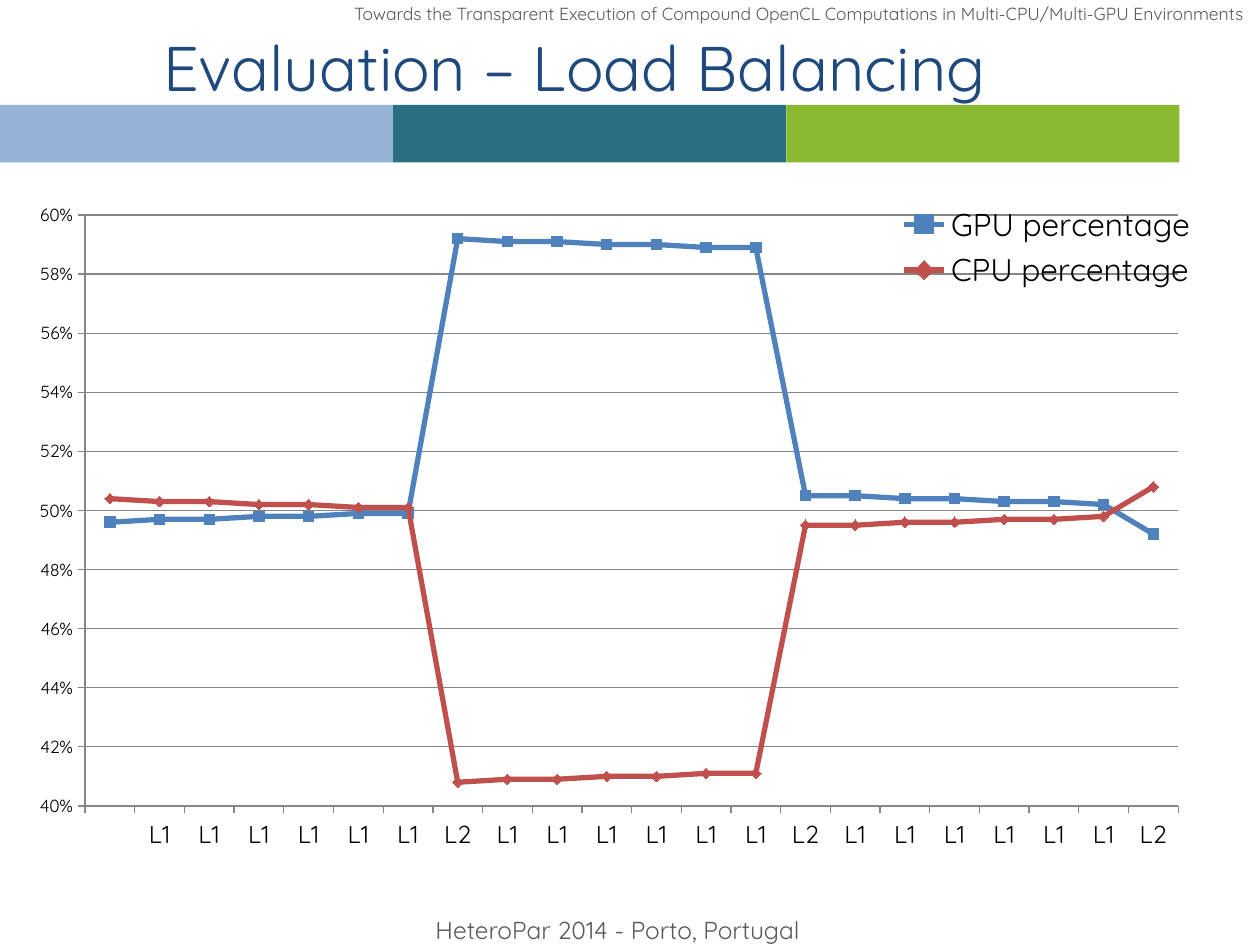
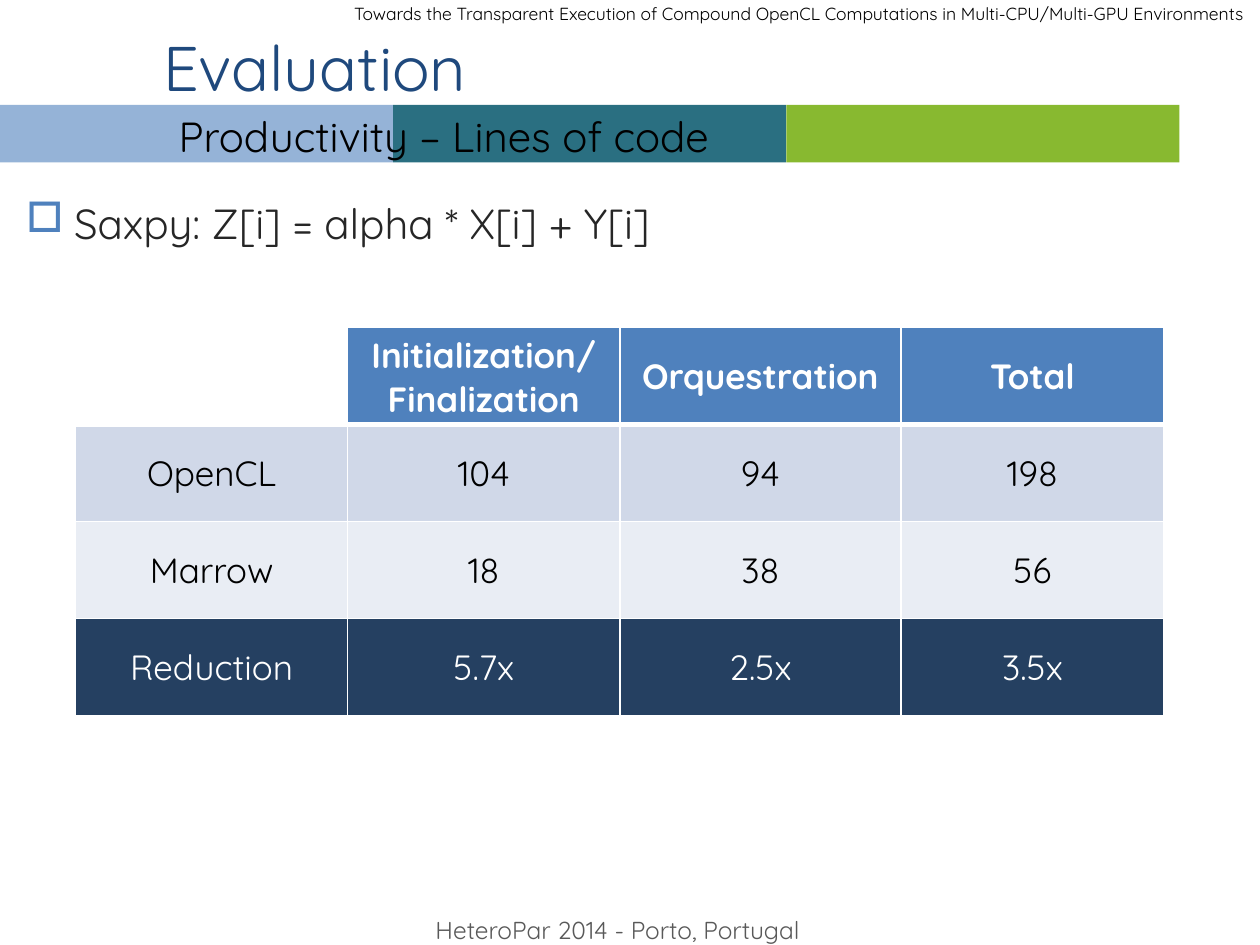
from dataclasses import dataclass

from lxml.etree import SubElement
from pptx import Presentation
from pptx.chart.data import CategoryChartData
from pptx.dml.color import RGBColor
from pptx.enum.chart import XL_CHART_TYPE, XL_LEGEND_POSITION, XL_MARKER_STYLE, XL_TICK_MARK
from pptx.enum.shapes import MSO_SHAPE
from pptx.enum.text import MSO_ANCHOR, PP_ALIGN
from pptx.oxml.ns import qn
from pptx.util import Inches, Pt


@dataclass(frozen=True)
class Theme:
    font: str = "Quicksand"
    # Colours
    title: str = "1F497D"
    white: str = "FFFFFF"
    black: str = "000000"
    muted: str = "595959"
    body: str = "262626"
    accent: str = "4F81BD"
    contrast: str = "C0504D"
    grid: str = "868686"
    bands: tuple = ("95B3D7", "2A6F81", "88B930")
    row_fills: tuple = ("4F81BD", "D0D8E8", "E9EDF4", "254061")
    # Type sizes
    title_size: int = 36
    body_size: int = 24
    table_size: int = 20
    legend_size: int = 18
    label_size: int = 14
    small_size: int = 10


THEME = Theme()
HEADER = ("Towards the Transparent Execution of Compound OpenCL Computations "
          "in Multi-CPU/Multi-GPU Environments ")
FOOTER = "HeteroPar 2014 - Porto, Portugal "
CONTENT_AREA = (0.11, 1.52, 9.43, 5.33)


def rgb(color):
    return RGBColor.from_string(color)


def write_text(frame, text, size=THEME.body_size, color=THEME.black, bold=False,
               align=PP_ALIGN.LEFT, anchor=MSO_ANCHOR.TOP, wrap=True):
    """Put one formatted paragraph in a text frame and return it."""
    frame.word_wrap = wrap
    frame.vertical_anchor = anchor
    paragraph = frame.paragraphs[0]
    paragraph.alignment = align
    run = paragraph.add_run()
    run.text = text
    set_font(run.font, size, color, bold)
    return paragraph


def set_font(font, size, color=THEME.black, bold=False):
    font.name = THEME.font
    font.size = Pt(size)
    font.bold = bold
    font.color.rgb = rgb(color)


def set_layout(parent, index, **fractions):
    """Place a chart part by fractions of the chart area."""
    for previous in parent.findall(qn("c:layout")):
        parent.remove(previous)
    layout = SubElement(parent, qn("c:layout"))
    parent.insert(index, layout)
    manual = SubElement(layout, qn("c:manualLayout"))
    if "w" in fractions:
        SubElement(manual, qn("c:layoutTarget"), val="inner")
    for axis in "xy":
        SubElement(manual, qn(f"c:{axis}Mode"), val="edge")
    for name, value in fractions.items():
        SubElement(manual, qn(f"c:{name}"), val=str(value))


def set_borders(cell, color, bottom):
    properties = cell._tc.get_or_add_tcPr()
    for index, (side, width) in enumerate(zip("LRTB", (1, 1, 1, bottom))):
        border = SubElement(properties, qn(f"a:ln{side}"), w=str(Pt(width)))
        fill = SubElement(border, qn("a:solidFill"))
        SubElement(fill, qn("a:srgbClr"), val=color)
        properties.insert(index, border)


class Deck:
    def __init__(self, theme):
        self.theme = theme
        self.presentation = Presentation()
        self.presentation.slide_width = Inches(10)
        self.presentation.slide_height = Inches(7.5)
        self.slide = None

    def new_slide(self, title, header_color):
        """Start a slide with its bands, title, header and footer."""
        theme = self.theme
        self.slide = self.presentation.slides.add_slide(self.presentation.slide_layouts[6])
        band_width = 3.12
        for position, color in enumerate(theme.bands):
            self.rectangle(position * band_width, 0.83, band_width, 0.46, color)
        heading = self.rectangle(0, 0.22, 9.75, 0.61, theme.white).text_frame
        heading.margin_left, heading.margin_right = Inches(1.3), Inches(0.3)
        write_text(heading, title, size=theme.title_size, color=theme.title,
                   anchor=MSO_ANCHOR.MIDDLE)
        edge = dict(align=PP_ALIGN.RIGHT, anchor=MSO_ANCHOR.MIDDLE)
        self.text(0, 0, 10, 0.22, HEADER, size=theme.small_size, color=header_color, **edge)
        self.text(3.12, 7.24, 3.38, 0.28, FOOTER, size=theme.label_size,
                  color=theme.muted, **edge)

    def rectangle(self, left, top, width, height, color):
        shape = self.slide.shapes.add_shape(
            MSO_SHAPE.RECTANGLE, *map(Inches, (left, top, width, height)))
        shape.shadow.inherit = False
        shape.fill.solid()
        shape.fill.fore_color.rgb = rgb(color)
        shape.line.fill.background()
        return shape

    def text(self, left, top, width, height, text, **style):
        box = self.slide.shapes.add_textbox(*map(Inches, (left, top, width, height)))
        return write_text(box.text_frame, text, **style)

    def bullet(self, text):
        paragraph = self.text(*CONTENT_AREA, text, color=self.theme.body)
        properties = paragraph._p.get_or_add_pPr()
        indent = Inches(0.38)
        properties.set("marL", str(indent))
        properties.set("indent", str(-indent))
        bullet_color = SubElement(properties, qn("a:buClr"))
        SubElement(bullet_color, qn("a:srgbClr"), val=self.theme.accent)
        SubElement(properties, qn("a:buChar"), char="□")

    def table(self, left, top, column_widths, row_height, rows):
        theme = self.theme
        table = self.slide.shapes.add_table(
            len(rows), len(column_widths), Inches(left), Inches(top),
            Inches(sum(column_widths)), Inches(row_height * len(rows))).table
        for column, width in zip(table.columns, column_widths):
            column.width = Inches(width)
        for r, row in enumerate(rows):
            is_header = r == 0
            color = theme.white if r in (0, len(rows) - 1) else theme.black
            for c, value in enumerate(row):
                cell = table.cell(r, c)
                cell.fill.solid()
                cell.fill.fore_color.rgb = rgb(theme.row_fills[r] if value else theme.white)
                set_borders(cell, theme.white, bottom=3 if is_header else 1)
                cell.vertical_anchor = MSO_ANCHOR.MIDDLE
                if value:
                    write_text(cell.text_frame, value, size=theme.table_size, color=color,
                               bold=is_header, align=PP_ALIGN.CENTER,
                               anchor=MSO_ANCHOR.MIDDLE)

    def line_chart(self, categories, shares, styles):
        theme = self.theme
        data = CategoryChartData(number_format="0%")
        data.categories = categories
        for name, values in shares.items():
            data.add_series(name, values)
        chart = self.slide.shapes.add_chart(
            XL_CHART_TYPE.LINE_MARKERS, *map(Inches, CONTENT_AREA), data).chart
        set_font(chart.font, theme.small_size)
        chart.has_title = False

        # Series
        plot = chart.plots[0]
        plot.vary_by_categories = False
        for series, (color, marker) in zip(plot.series, styles):
            series.smooth = False
            series.format.line.width = Pt(3)
            series.format.line.color.rgb = rgb(color)
            series.marker.style = marker
            series.marker.size = 6
            series.marker.format.fill.solid()
            series.marker.format.fill.fore_color.rgb = rgb(color)
            series.marker.format.line.color.rgb = rgb(color)

        # Axes
        share_axis, load_axis = chart.value_axis, chart.category_axis
        share_axis.minimum_scale, share_axis.maximum_scale = 0.4, 0.6
        share_axis.major_unit = 0.02
        share_axis.has_major_gridlines = True
        share_axis.tick_labels.number_format = "0%"
        share_axis.tick_labels.number_format_is_linked = False
        set_font(load_axis.tick_labels.font, theme.label_size)
        for axis in (share_axis, load_axis):
            axis.major_tick_mark = XL_TICK_MARK.OUTSIDE
        for part in (share_axis, load_axis, share_axis.major_gridlines):
            part.format.line.color.rgb = rgb(theme.grid)
            part.format.line.width = Pt(0.75)

        # Legend over the plot
        chart.has_legend = True
        legend = chart.legend
        legend.position = XL_LEGEND_POSITION.CORNER
        legend.include_in_layout = True
        set_font(legend.font, theme.legend_size)
        set_layout(legend._element, 1, x=0.75, y=0.01)
        plot_area = chart._chartSpace.chart.plotArea
        set_layout(plot_area, 0, x=0.06, y=0.035, w=0.92, h=0.88)


def main():
    deck = Deck(THEME)

    # Load balancing
    deck.new_slide("Evaluation – Load Balancing", THEME.muted)
    loads = [""] + (["L1"] * 6 + ["L2"]) * 3
    gpu = [0.496, 0.497, 0.497, 0.498, 0.498, 0.499, 0.499,
           0.592, 0.591, 0.591, 0.59, 0.59, 0.589, 0.589,
           0.505, 0.505, 0.504, 0.504, 0.503, 0.503, 0.502, 0.492]
    cpu = [round(1 - share, 3) for share in gpu]
    deck.line_chart(loads, {"GPU percentage": gpu, "CPU percentage": cpu},
                    [(THEME.accent, XL_MARKER_STYLE.SQUARE),
                     (THEME.contrast, XL_MARKER_STYLE.DIAMOND)])

    # Productivity
    deck.new_slide("Evaluation", THEME.black)
    deck.text(1.32, 0.83, 4.64, 0.5, "Productivity – Lines of code", wrap=False)
    deck.bullet("Saxpy: Z[i] = alpha * X[i] + Y[i]")
    deck.table(0.6, 2.6, (2.16, 2.16, 2.23, 2.09), 0.77, [
        ("", "Initialization/Finalization", "Orquestration", "Total"),
        ("OpenCL", "104", "94", "198"),
        ("Marrow", "18", "38", "56"),
        ("Reduction", "5.7x", "2.5x", "3.5x"),
    ])

    deck.presentation.save("out.pptx")


if __name__ == "__main__":
    main()
